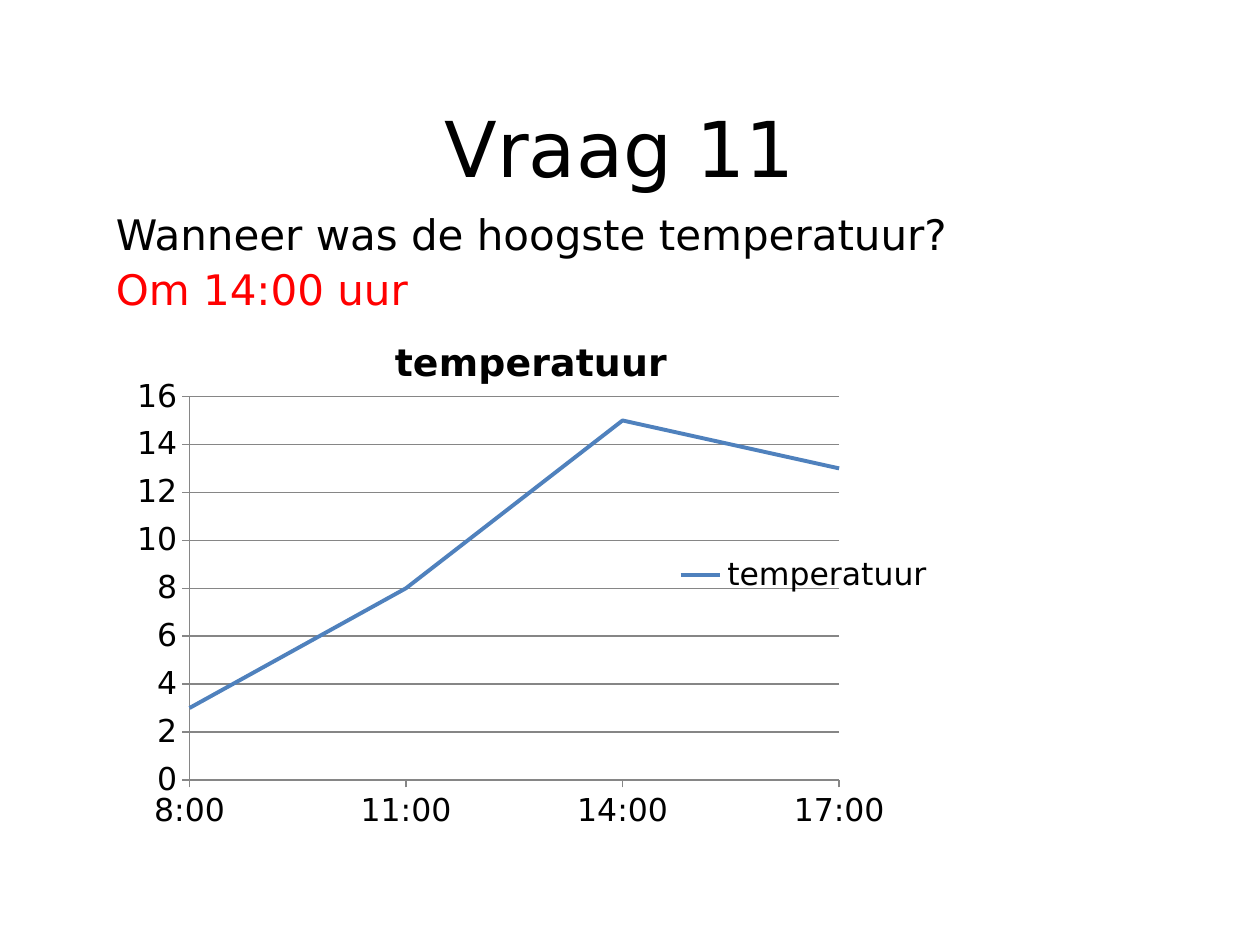
from lxml.etree import SubElement
from pptx import Presentation
from pptx.chart.data import CategoryChartData
from pptx.dml.color import RGBColor
from pptx.enum.chart import XL_CHART_TYPE, XL_LEGEND_POSITION, XL_TICK_MARK
from pptx.enum.text import MSO_ANCHOR, MSO_AUTO_SIZE, PP_ALIGN
from pptx.oxml import parse_xml
from pptx.oxml.ns import nsdecls, qn
from pptx.util import Cm, Pt

FONT = "DejaVu Sans"
BLACK = RGBColor(0x00, 0x00, 0x00)
WHITE = RGBColor(0xFF, 0xFF, 0xFF)
RED = RGBColor(0xFF, 0x00, 0x00)
BLUE = RGBColor(0x4F, 0x81, 0xBD)
GREY = RGBColor(0x86, 0x86, 0x86)


def style_font(font, size, color=BLACK, bold=False):
    """Set typeface, size, colour and weight."""
    font.name = FONT
    font.size = Pt(size)
    font.bold = bold
    font.color.rgb = color


def place(shape, left, top, width, height):
    """Move a placeholder to the given box."""
    shape.left, shape.top, shape.width, shape.height = left, top, width, height


def add_title(page, box):
    """Fill the title placeholder."""
    title = page.shapes.title
    place(title, *box)
    frame = title.text_frame
    frame.text = "Vraag 11"
    frame.auto_size = MSO_AUTO_SIZE.NONE
    frame.vertical_anchor = MSO_ANCHOR.MIDDLE
    para = frame.paragraphs[0]
    para.alignment = PP_ALIGN.CENTER
    style_font(para.runs[0].font, 44)


def add_question(page, box):
    """Write the question and its answer in the body placeholder."""
    body = page.placeholders[1]
    place(body, *box)
    body.fill.solid()
    body.fill.fore_color.rgb = WHITE
    color = body.fill._xPr.find(".//" + qn("a:srgbClr"))
    SubElement(color, qn("a:alpha"), val="76000")
    frame = body.text_frame
    frame.text = "Wanneer was de hoogste temperatuur?\nOm 14:00 uur"
    frame.auto_size = MSO_AUTO_SIZE.NONE
    for para, ink, gap in zip(frame.paragraphs, (BLACK, RED), (0, 5.6)):
        para.level = 1
        para.line_spacing = 0.9
        para.space_before = Pt(gap)
        properties = para._p.get_or_add_pPr()
        properties.set("marL", str(Cm(0.53)))
        properties.set("indent", str(Cm(0.46)))
        SubElement(properties, qn("a:buNone"))
        style_font(para.runs[0].font, 24, ink)


def set_plot_area(chart, left, top, width, height):
    """Fix the inner plot area as fractions of the chart."""
    area = chart._chartSpace.chart.plotArea
    for old in area.findall(qn("c:layout")):
        area.remove(old)
    sizes = zip("xywh", (left, top, width, height))
    area.insert(0, parse_xml(
        f'<c:layout {nsdecls("c")}><c:manualLayout><c:layoutTarget val="inner"/>'
        '<c:xMode val="edge"/><c:yMode val="edge"/>'
        + "".join(f'<c:{key} val="{value}"/>' for key, value in sizes)
        + "</c:manualLayout></c:layout>"))


def start_line_on_axis(axis):
    """Let the categories sit on the tick marks."""
    crossing = parse_xml(f'<c:crossBetween {nsdecls("c")} val="midCat"/>')
    axis._element.find(qn("c:crosses")).addnext(crossing)


def add_temperature_chart(page, box):
    """Draw the temperature line over the day."""
    data = CategoryChartData()
    data.categories = ["8:00", "11:00", "14:00", "17:00"]
    data.add_series("temperatuur", (3, 8, 15, 13))
    chart = page.shapes.add_chart(XL_CHART_TYPE.LINE, *box, data).chart
    style_font(chart.font, 18)
    chart.has_title = True
    chart.chart_title.text_frame.text = "temperatuur"
    heading = chart.chart_title.text_frame.paragraphs[0]
    style_font(heading.runs[0].font, 21.6, bold=True)
    chart.has_legend = True
    chart.legend.position = XL_LEGEND_POSITION.RIGHT
    chart.legend.include_in_layout = False

    values = chart.value_axis
    values.minimum_scale, values.maximum_scale, values.major_unit = 0, 16, 2
    values.has_major_gridlines = True
    values.major_gridlines.format.line.color.rgb = GREY
    start_line_on_axis(values)
    for axis in (chart.category_axis, values):
        axis.major_tick_mark = XL_TICK_MARK.OUTSIDE
        axis.format.line.color.rgb = GREY

    plot = chart.plots[0]
    plot.vary_by_categories = False
    series = plot.series[0]
    series.smooth = False
    series.format.line.color.rgb = BLUE
    series.format.line.width = Pt(2.25)
    set_plot_area(chart, 0.09, 0.16, 0.78, 0.73)


def main():
    """Build and save the deck."""
    deck = Presentation()
    deck.slide_width, deck.slide_height = Cm(25.4), Cm(19.05)
    page = deck.slides.add_slide(deck.slide_layouts[1])
    add_title(page, (Cm(1.7), Cm(0.91), Cm(21.59), Cm(4.09)))
    add_question(page, (Cm(1.09), Cm(4.19), Cm(22.61), Cm(12.75)))
    add_temperature_chart(page, (Cm(2.31), Cm(6.3), Cm(16.79), Cm(10.59)))
    deck.save("out.pptx")


if __name__ == "__main__":
    main()
